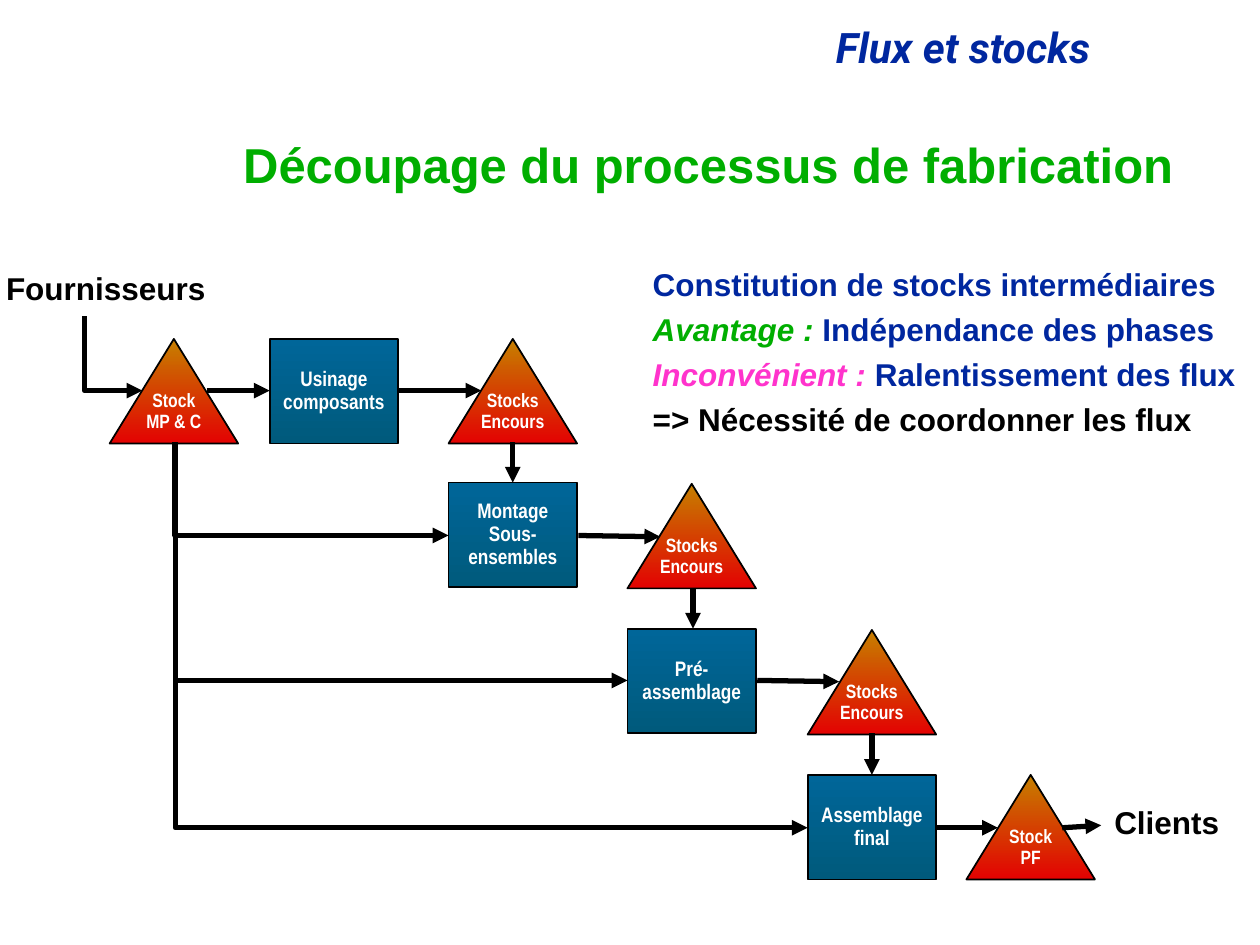
"""Build the slide on splitting a manufacturing process into stages with stocks."""
from lxml import etree
from pptx import Presentation
from pptx import util as u
from pptx.dml.color import RGBColor
from pptx.enum import shapes, text
from pptx.oxml.ns import qn

In = u.Inches
C = {"black": "000000", "white": "FFFFFF", "blue": "00279F", "green": "00AE00", "pink": "FF33CC",
     "box_top": "006699", "box_low": "005A7C", "tri_top": "C68000", "tri_low": "E30202"}
MIDDLE, TOP = text.MSO_ANCHOR.MIDDLE, text.MSO_ANCHOR.TOP
CENTER, RIGHT, LEFT = text.PP_ALIGN.CENTER, text.PP_ALIGN.RIGHT, text.PP_ALIGN.LEFT


def write(tf, lines, size, font="Arial", align=CENTER, anchor=TOP, margins=(0.1, 0.05), wrap=True):
    """Fill a text frame with paragraphs made of (text, colour, italic) runs."""
    x, y = map(In, margins)
    frame = {"margin_left": x, "margin_right": x, "margin_top": y, "margin_bottom": y,
             "word_wrap": wrap, "vertical_anchor": anchor, "auto_size": text.MSO_AUTO_SIZE.NONE}
    for name, value in frame.items():
        setattr(tf, name, value)
    for i, runs in enumerate(lines):
        p = tf.add_paragraph() if i else tf.paragraphs[0]
        p.alignment, p.line_spacing, p.space_before = align, 0.9, u.Pt(0)
        for words, colour, italic in runs:
            r = p.add_run()
            r.text = words
            for name, value in {"size": u.Pt(size), "name": font, "bold": True, "italic": italic}.items():
                setattr(r.font, name, value)
            r.font.color.rgb = RGBColor.from_string(C[colour])


def arrow(kind, x1, y1, x2, y2):
    """Add a thick black connector with an arrowhead at its end."""
    sp = s.shapes.add_connector(kind, In(x1), In(y1), In(x2), In(y2))
    sp.line.width = u.Pt(3)
    sp.line.color.rgb = RGBColor.from_string(C["black"])
    etree.SubElement(sp.line._get_or_add_ln(), qn("a:tailEnd"), type="triangle")
    etree.SubElement(sp._element.spPr, qn("a:effectLst"))
    return sp


prs = Presentation()
prs.slide_width, prs.slide_height = In(10), In(7.5)
s = prs.slides.add_slide(prs.slide_layouts[1])

title, body = s.placeholders
for sp, box in ((title, (1.08, 1.08, 8.33, 0.5)), (body, (4.83, 2.09, 5.17, 1.58))):
    sp.left, sp.top, sp.width, sp.height = map(In, box)
write(title.text_frame, [[("Découpage du processus de fabrication", "green", False)]], 28,
      align=RIGHT, anchor=MIDDLE)
write(body.text_frame, [
    [("Constitution de stocks intermédiaires", "blue", False)],
    [("Avantage : ", "green", True), ("Indépendance des phases", "blue", False)],
    [("Inconvénient : ", "pink", True), ("Ralentissement des flux", "blue", False)],
    [("=> Nécessité de coordonner les flux", "black", False)],
], 18, align=LEFT)
for p in body.text_frame.paragraphs:
    p.level, p.space_before = 1, u.Pt(6.2)
    pPr = p._p.get_or_add_pPr()
    pPr.set("marL", str(In(0.25)))
    pPr.set("indent", "0")
    etree.SubElement(pPr, qn("a:buNone"))

labels = [
    ("Flux et stocks", (1.17, 0.17, 7.58, 0.46), 24, "Roboto", "blue", RIGHT, True),
    ("Fournisseurs", (-0.06, 2.12, 1.8, 0.37), 18, "Arial", "black", CENTER, False),
    ("Clients", (8.74, 6.36, 1.04, 0.37), 18, "Arial", "black", CENTER, False),
]
for words, box, size, font, colour, align, header in labels:
    sp = s.shapes.add_textbox(*map(In, box))
    write(sp.text_frame, [[(words, colour, header)]], size, font, align, wrap=header)

styles = {
    "box": (shapes.MSO_SHAPE.RECTANGLE, 12, MIDDLE, (0.04, 0.05)),
    "tri": (shapes.MSO_SHAPE.ISOSCELES_TRIANGLE, 11, TOP, (0, 0)),
}
stages = [
    ("box", 2.14, 2.69, ("Usinage", "composants")),
    ("box", 3.56, 3.83, ("Montage", "Sous-ensembles")),
    ("box", 4.98, 4.99, ("Pré-", "assemblage")),
    ("box", 6.41, 6.15, ("Assemblage", "final")),
    ("tri", 0.87, 2.69, ("Stock", "MP & C")),
    ("tri", 3.56, 2.69, ("Stocks", "Encours")),
    ("tri", 4.98, 3.84, ("Stocks", "Encours")),
    ("tri", 6.41, 5, ("Stocks", "Encours")),
    ("tri", 7.67, 6.15, ("Stock", "PF")),
]
for kind, x, y, words in stages:
    shape, size, anchor, margins = styles[kind]
    sp = s.shapes.add_shape(shape, In(x), In(y), In(1.02), In(0.83))
    sp.shadow.inherit = False
    sp.fill.gradient()
    sp.fill.gradient_angle = 270
    for stop, position, end in zip(sp.fill.gradient_stops, (0, 1), ("top", "low")):
        stop.position = position
        stop.color.rgb = RGBColor.from_string(C[f"{kind}_{end}"])
    sp.line.width = u.Pt(1)
    sp.line.color.rgb = RGBColor.from_string(C["black"])
    write(sp.text_frame, [[(w, "white", False)] for w in words], size, "Arial Narrow",
          anchor=anchor, margins=margins)

straight = [
    (1.64, 3.1, 2.14, 3.1), (3.16, 3.1, 3.82, 3.1), (4.07, 3.51, 4.07, 3.83),
    (4.59, 4.25, 5.24, 4.26), (5.5, 4.67, 5.5, 4.99), (6.01, 5.4, 6.66, 5.41),
    (6.92, 5.82, 6.92, 6.15), (7.43, 6.57, 7.92, 6.57), (8.43, 6.57, 8.74, 6.55),
]
for ends in straight:
    arrow(shapes.MSO_CONNECTOR.STRAIGHT, *ends)

bent = [(1.39, 3.51, 3.56, 4.25), (1.39, 3.51, 4.98, 5.4),
        (1.39, 3.51, 6.41, 6.57), (0.67, 2.51, 1.13, 3.1)]
for x1, y1, x2, y2 in bent:
    cx, cy, dx, dy = (x1 + x2) / 2, (y1 + y2) / 2, (x2 - x1) / 2, (y2 - y1) / 2
    sp = arrow(shapes.MSO_CONNECTOR.ELBOW, cx + dy, cy - dx, cx - dy, cy + dx)
    spPr = sp._element.spPr
    spPr.find(qn("a:xfrm")).set("rot", str(270 * 60000))
    spPr.find(qn("a:prstGeom")).set("prst", "bentConnector2")

prs.save("out.pptx")
